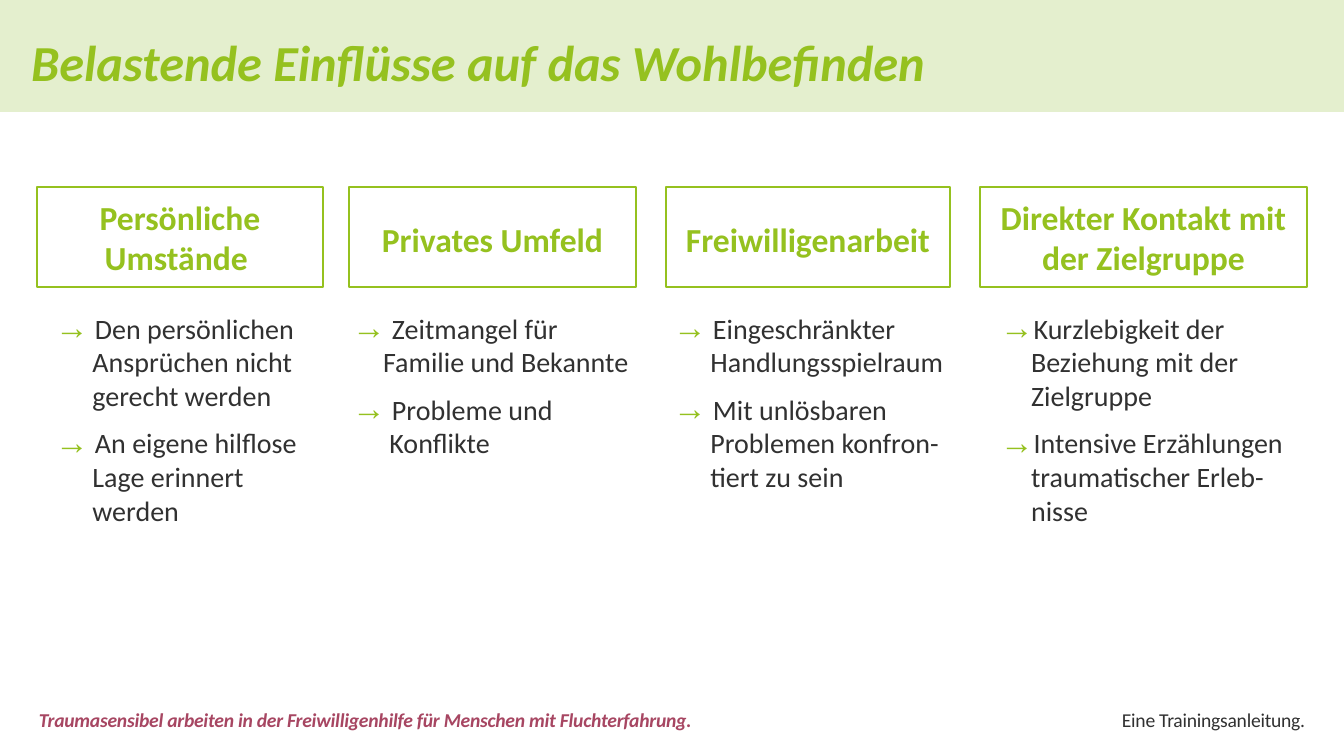
"""Build the slide on burdens that affect the well-being of volunteers."""
from lxml import etree
from pptx import Presentation
from pptx import util as u
from pptx.dml.color import RGBColor
from pptx.enum import shapes, text
from pptx.oxml import ns

PX = 914400 / 100.8
WIDE, HIGH = 1344, 756
FACE = "Calibri"
HUES = {"green": "95C11F", "pale": "E4EFCE", "white": "FFFFFF",
        "ink": "313131", "plum": "A74662"}

TITLE = "Belastende Einflüsse auf das Wohlbefinden"
# head, head left, head width, list left, list width, points
COLS = [
    ("Persönliche Umstände ", 37, 286, 45, 278,
     [" Den persönlichen \v Ansprüchen nicht \v gerecht werden",
      " An eigene hilflose \v Lage erinnert \v werden"]),
    ("Privates Umfeld", 349, 287, 342, 307,
     [" Zeitmangel für Familie und Bekannte",
      " Probleme und \v Konflikte"]),
    ("Freiwilligenarbeit", 666, 284, 663, 302,
     [" Eingeschränkter \v Handlungsspielraum",
      " Mit unlösbaren \v Problemen konfron-\v tiert zu sein"]),
    ("Direkter Kontakt mit der Zielgruppe", 980, 327, 990, 317,
     ["Kurzlebigkeit der Beziehung mit der Zielgruppe",
      "Intensive Erzählungen traumatischer Erleb-nisse"]),
]
FEET = [
    ("Traumasensibel arbeiten in der Freiwilligenhilfe für Menschen "
     "mit Fluchterfahrung.", 29, 672, "plum", True, text.PP_ALIGN.LEFT),
    ("Eine Trainingsanleitung.", 1108, 207, "ink", False,
     text.PP_ALIGN.RIGHT),
]
HEAD_TOP, HEAD_HIGH = 187, 100
LIST_TOP, LIST_HIGH = 306, 330
FOOT_TOP, FOOT_HIGH = 703, 34


def emu(px):
    return u.Emu(round(px * PX))


def tint(hue):
    return RGBColor.from_string(HUES[hue])


def place(shape, *box):
    shape.left, shape.top, shape.width, shape.height = map(emu, box)


def style(par, size, hue, bold=False, slant=False,
          align=text.PP_ALIGN.LEFT, lead=1.0):
    par.alignment = align
    par.line_spacing = lead
    font = par.font
    font.name, font.size = FACE, u.Pt(size)
    font.bold, font.italic = bold, slant
    font.color.rgb = tint(hue)


def setup(shape, anchor, wrap=True):
    frame = shape.text_frame
    frame.auto_size = text.MSO_AUTO_SIZE.NONE
    frame.word_wrap = wrap
    frame.vertical_anchor = anchor
    return frame


def block(slide, box, fill, line=None):
    shape = slide.shapes.add_shape(shapes.MSO_SHAPE.RECTANGLE,
                                   *map(emu, box))
    shape.shadow.inherit = False
    shape.fill.solid()
    shape.fill.fore_color.rgb = tint(fill)
    if line:
        shape.line.color.rgb = tint(line)
        shape.line.width = u.Pt(1.5)
    else:
        shape.line.fill.background()
    return shape


def bullet(par):
    props = par._p.get_or_add_pPr()
    props.set("marL", str(emu(31)))
    props.set("indent", str(-emu(31)))
    color = etree.SubElement(props, ns.qn("a:buClr"))
    etree.SubElement(color, ns.qn("a:srgbClr"), val=HUES["green"])
    etree.SubElement(props, ns.qn("a:buSzPct"), val="120000")
    etree.SubElement(props, ns.qn("a:buFont"), typeface="Arial")
    etree.SubElement(props, ns.qn("a:buChar"), char="→")


def column(slide, holder, head, left, width, start, span, points):
    shape = block(slide, (left, HEAD_TOP, width, HEAD_HIGH),
                  "white", "green")
    frame = setup(shape, text.MSO_ANCHOR.MIDDLE)
    frame.text = head
    lead = 1.0 if " " in head and len(head) > 18 else u.Pt(32)
    style(frame.paragraphs[0], 24, "green", True,
          align=text.PP_ALIGN.CENTER, lead=lead)

    place(holder, start, LIST_TOP, span, LIST_HIGH)
    frame = setup(holder, text.MSO_ANCHOR.TOP)
    for i, point in enumerate(points):
        par = frame.add_paragraph() if i else frame.paragraphs[0]
        par.text = point
        bullet(par)
        par.space_before = u.Pt(10)
        style(par, 20, "ink")


def foot(slide, words, left, width, hue, strong, align):
    box = slide.shapes.add_textbox(
        *map(emu, (left, FOOT_TOP, width, FOOT_HIGH)))
    frame = setup(box, text.MSO_ANCHOR.TOP, False)
    frame.text = words
    par = frame.paragraphs[0]
    style(par, 14, hue, strong, strong, align)
    par.runs[0].font._element.set("spc", "-20")


def main():
    deck = Presentation()
    deck.slide_width, deck.slide_height = emu(WIDE), emu(HIGH)
    slide = deck.slides.add_slide(deck.slide_layouts[4])
    title, *lists = slide.placeholders

    band = block(slide, (0, 0, WIDE, 112), "pale")
    title._element.addprevious(band._element)
    place(title, 21, 24, 1291, 90)
    frame = setup(title, text.MSO_ANCHOR.MIDDLE)
    frame.text = TITLE
    style(frame.paragraphs[0], 36, "green", True, True, lead=u.Pt(32))

    for holder, col in zip(lists, COLS):
        column(slide, holder, *col)
    for item in FEET:
        foot(slide, *item)
    deck.save("out.pptx")


if __name__ == "__main__":
    main()
